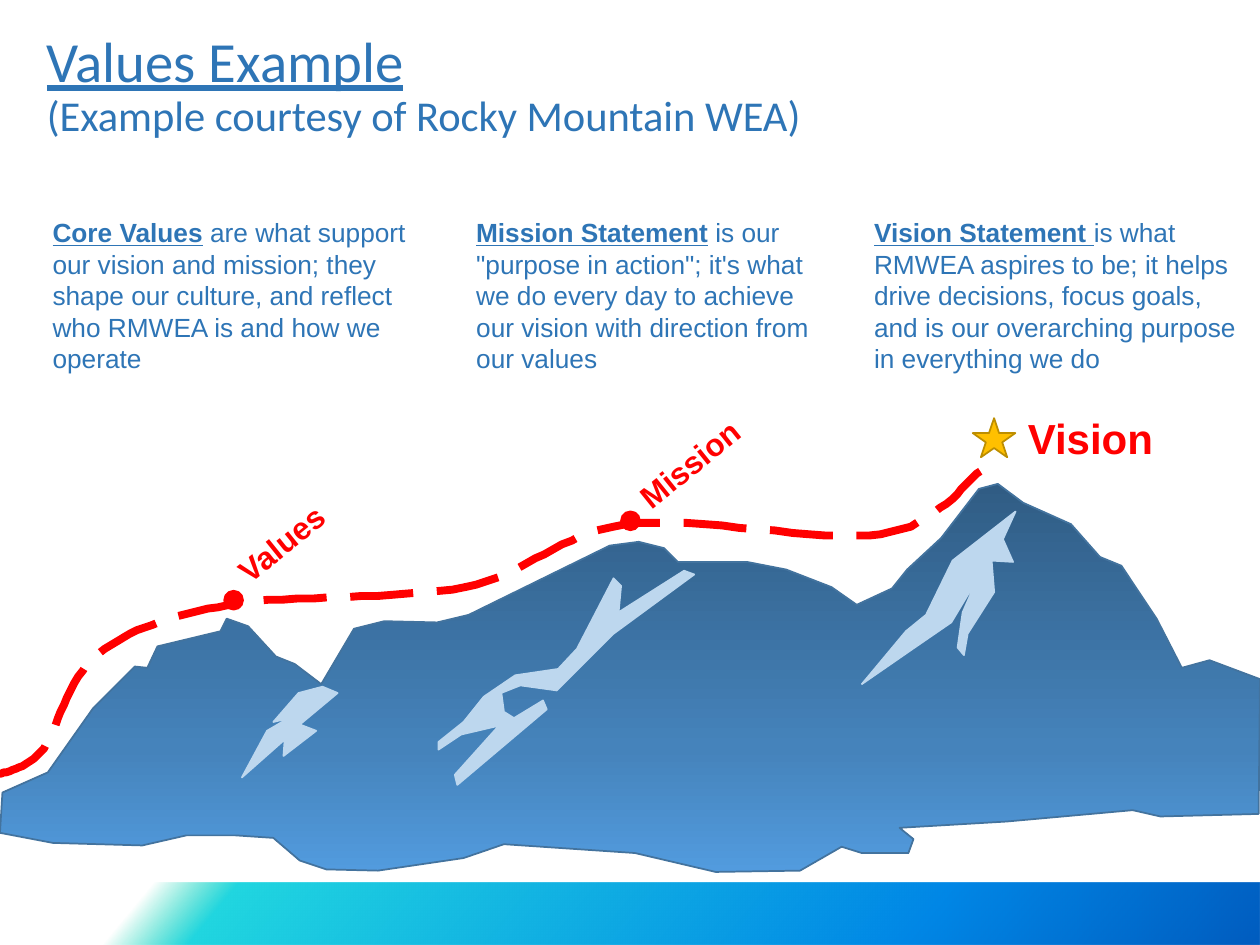
from dataclasses import dataclass

import pptx
import pptx.dml.color
import pptx.enum.dml
import pptx.enum.shapes
import pptx.enum.text
import pptx.oxml.ns
import pptx.util
from lxml import etree
from pptx.util import Cm

COLORS = {
    "text": "2E75B6", "route": "FF0000", "snow": "BDD7EE", "ridge": "43739E",
    "star": "FFC000", "star edge": "BD8E00",
}
# Gradient stops: position in percent and colour
BAND_STOPS = [(19, "03D4A8"), (25, "21D6E0"), (75, "0087E6"), (100, "005CBF")]
ROCK_STOPS = [(0, "305C84"), (68, "4583BB"), (100, "529BDE")]

# Outlines are drawn on a grid of hundredths of an inch
GRID = Cm(0.0254)
RIDGE = [
    (2, 629), (38, 613), (74, 562), (107, 529), (117, 530), (125, 513), (175, 501),
    (180, 491), (197, 497), (219, 521), (234, 527), (255, 543), (281, 499), (305, 493),
    (347, 494), (372, 488), (484, 433), (507, 430), (527, 435), (538, 446), (593, 446),
    (624, 452), (660, 466), (680, 480), (708, 467), (720, 452), (747, 427), (777, 388),
    (792, 384), (812, 399), (850, 416), (873, 442), (890, 449), (918, 491), (938, 530),
    (960, 524), (1000, 539),
]
FOOT = [
    (999, 646), (921, 648), (899, 643), (799, 652), (714, 657), (725, 666), (721, 677),
    (684, 677), (668, 672), (635, 691), (568, 692), (504, 677), (400, 670), (368, 681),
    (300, 691), (259, 690), (238, 683), (217, 665), (187, 663), (148, 663), (113, 671),
    (42, 669), (0, 661),
]
SNOWFIELDS = [
    [(217, 573), (237, 550), (256, 545), (268, 550), (238, 575), (251, 580), (225, 600),
     (226, 587), (192, 617), (212, 580), (229, 570)],
    [(348, 589), (368, 573), (384, 553), (409, 536), (443, 531), (458, 515), (487, 459),
     (493, 465), (491, 486), (543, 453), (551, 456), (487, 503), (442, 548), (413, 544),
     (398, 550), (400, 565), (408, 570), (431, 556), (434, 563), (363, 623), (361, 615),
     (396, 576), (366, 583), (348, 595)],
    [(806, 406), (796, 428), (804, 446), (787, 445), (789, 470), (768, 503), (765, 520),
     (760, 514), (764, 486), (776, 459), (755, 494), (723, 516), (684, 543), (719, 501),
     (735, 488), (756, 445)],
]
ROUTE = [(-6, 616), (32, 597), (78, 519), (182, 480), (369, 466), (497, 416), (699, 424),
         (778, 374)]


@dataclass
class Label:
    text: str
    left: float
    top: float
    width: float
    height: float
    size: int
    rotation: float = 0


@dataclass
class Definition:
    term: str
    meaning: str
    left: float


LABELS = [
    Label("Values", 4.39, 10.39, 2.69, 1.02, 18, 321.2),
    Label("Mission", 12.4, 8.66, 3.45, 1.02, 18, 321.2),
    Label("Vision", 20.47, 8.2, 3.18, 1.27, 24),
]
DEFINITIONS = [
    Definition("Core Values", " are what support our vision and mission; they shape our "
               "culture, and reflect who RMWEA is and how we operate", 0.81),
    Definition("Mission Statement", " is our \"purpose in action\"; it's what we do every day "
               "to achieve our vision with direction from our values", 9.35),
    Definition("Vision Statement ", "is what RMWEA aspires to be; it helps drive decisions, "
               "focus goals, and is our overarching purpose in everything we do", 17.37),
]
WAYPOINTS = [(4.52, 11.91), (12.52, 10.31)]


def rgb(name: str) -> pptx.dml.color.RGBColor:
    return pptx.dml.color.RGBColor.from_string(COLORS[name])


def format_font(font, size: float, color: str, face: str, bold=False, underline=False) -> None:
    font.size = pptx.util.Pt(size)
    font.name = face
    font.bold = bold
    font.underline = underline
    font.color.rgb = rgb(color)


def draw_line(shape, color: str, width: float = 1) -> None:
    shape.shadow.inherit = False
    shape.line.color.rgb = rgb(color)
    shape.line.width = pptx.util.Pt(width)


def paint(shape, fill: str, line: str) -> None:
    shape.fill.solid()
    shape.fill.fore_color.rgb = rgb(fill)
    draw_line(shape, line)


def paint_gradient(shape, stops: list, angle: float, fade_in: bool = False) -> None:
    """Fill with a clockwise-angled gradient; fade_in makes its first stop transparent."""
    qn = pptx.oxml.ns.qn
    shape.fill.gradient()
    shape.fill.gradient_angle = 360 - angle
    stop_list = shape.element.spPr.find(qn("a:gradFill")).find(qn("a:gsLst"))
    for old_stop in list(stop_list):
        stop_list.remove(old_stop)
    for position, color in stops:
        stop = etree.SubElement(stop_list, qn("a:gs"), pos=str(position * 1000))
        etree.SubElement(stop, qn("a:srgbClr"), val=color)
    if fade_in:
        etree.SubElement(stop_list[0][0], qn("a:alpha"), val="0")


def add_outline(shapes, points: list, close: bool = True):
    builder = shapes.build_freeform(*points[0], scale=GRID)
    builder.add_line_segments(points[1:], close=close)
    return builder.convert_to_shape()


def smooth_through(nodes: list, steps: int = 16) -> list:
    """Points along the Catmull-Rom curve through the nodes."""
    padded = [nodes[0], *nodes, nodes[-1]]
    points = [nodes[0]]
    for corners in zip(padded, padded[1:], padded[2:], padded[3:]):
        for step in range(1, steps + 1):
            t = step / steps
            points.append(tuple(
                b + t * (c - a) / 2 + t * t * (2 * a - 5 * b + 4 * c - d) / 2
                + t ** 3 * (3 * b - a - 3 * c + d) / 2
                for a, b, c, d in zip(*corners)))
    return points


def add_label(shapes, label: Label) -> None:
    box = shapes.add_textbox(Cm(label.left), Cm(label.top), Cm(label.width), Cm(label.height))
    box.rotation = label.rotation
    box.text_frame.word_wrap = True
    box.text_frame.text = label.text
    format_font(box.text_frame.paragraphs[0].runs[0].font, label.size, "route", "Arial", bold=True)


def add_definition(shapes, definition: Definition) -> None:
    box = shapes.add_textbox(Cm(definition.left), Cm(4.24), Cm(7.8), Cm(3.45))
    box.text_frame.word_wrap = True
    paragraph = box.text_frame.paragraphs[0]
    for text, strong in ((definition.term, True), (definition.meaning, False)):
        run = paragraph.add_run()
        run.text = text
        format_font(run.font, 15, "text", "Arial", bold=strong, underline=strong)


def fill_title(title) -> None:
    title.left, title.top, title.width, title.height = Cm(0.69), Cm(0.61), Cm(21.89), Cm(2.29)
    frame = title.text_frame
    frame.auto_size = pptx.enum.text.MSO_AUTO_SIZE.NONE
    frame.vertical_anchor = pptx.enum.text.MSO_ANCHOR.MIDDLE
    paragraph = frame.paragraphs[0]
    paragraph.text = "Values Example\v(Example courtesy of Rocky Mountain WEA)"
    paragraph.alignment = pptx.enum.text.PP_ALIGN.LEFT
    paragraph.line_spacing = 0.9
    heading, credit = paragraph.runs
    format_font(heading.font, 32.4, "text", "Calibri", underline=True)
    format_font(credit.font, 24.3, "text", "Calibri")


def main() -> None:
    deck = pptx.Presentation()
    deck.slide_width, deck.slide_height = Cm(25.4), Cm(19.05)
    slide = deck.slides.add_slide(deck.slide_layouts[5])
    shapes = slide.shapes
    kinds = pptx.enum.shapes.MSO_SHAPE

    band = shapes.add_shape(kinds.RECTANGLE, Cm(-2.36), Cm(17.8), Cm(27.76), Cm(1.25))
    band.shadow.inherit = False
    paint_gradient(band, BAND_STOPS, 40, fade_in=True)
    band.line.fill.background()
    fill_title(shapes.title)

    landscape = shapes.add_group_shape().shapes
    mountains = add_outline(landscape, RIDGE + FOOT)
    paint_gradient(mountains, ROCK_STOPS, 90)
    draw_line(mountains, "ridge")
    for snowfield in SNOWFIELDS:
        paint(add_outline(landscape, snowfield), "snow", "snow")

    star = shapes.add_shape(kinds.STAR_5_POINT, Cm(19.61), Cm(8.43), Cm(0.86), Cm(0.79))
    paint(star, "star", "star edge")
    for left, top in WAYPOINTS:
        waypoint = shapes.add_shape(kinds.FLOWCHART_CONNECTOR, Cm(left), Cm(top), Cm(0.38), Cm(0.38))
        paint(waypoint, "route", "route")
    for label in LABELS:
        add_label(shapes, label)
    for definition in DEFINITIONS:
        add_definition(shapes, definition)

    route = add_outline(shapes, smooth_through(ROUTE), close=False)
    route.fill.background()
    draw_line(route, "route", 4.5)
    route.line.dash_style = pptx.enum.dml.MSO_LINE.LONG_DASH
    deck.save("out.pptx")


if __name__ == "__main__":
    main()
